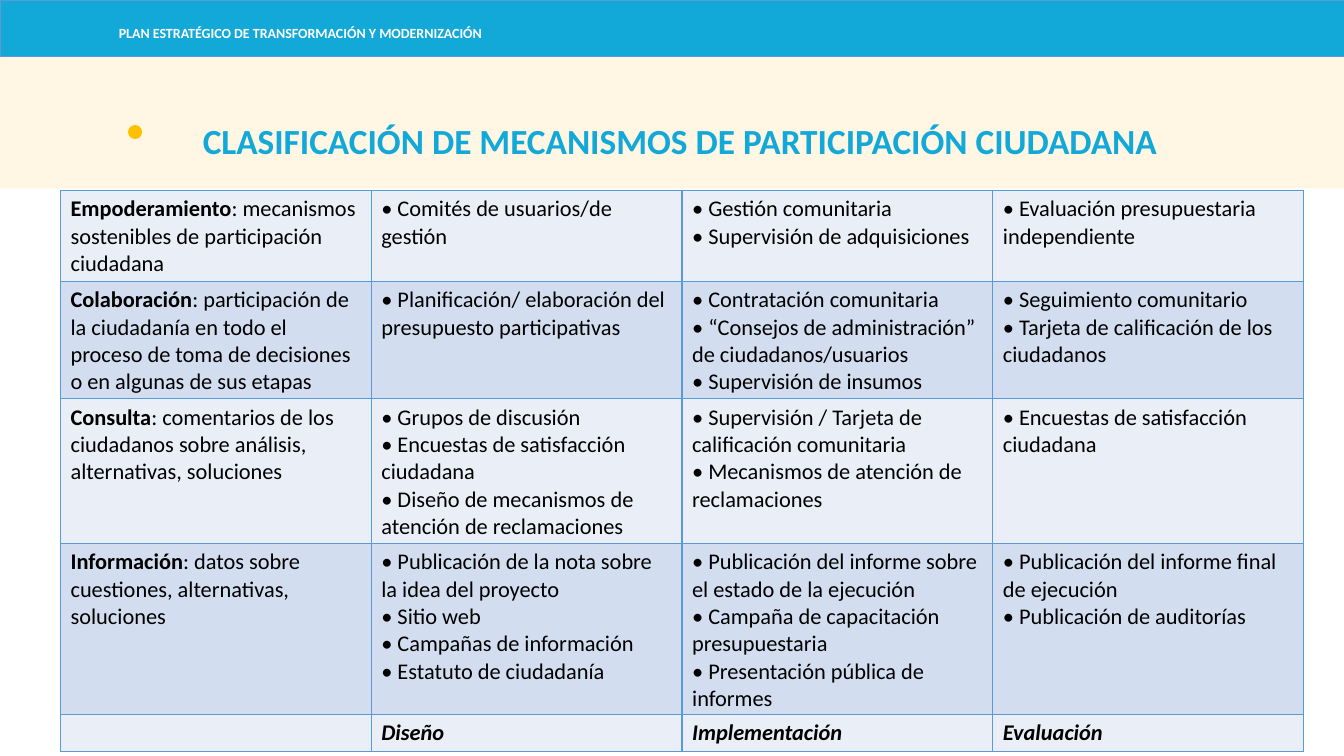
from lxml import etree
from pptx import Presentation
from pptx.dml.color import RGBColor
from pptx.enum import shapes, text
from pptx.oxml import ns
from pptx.util import Inches, Pt

BLUE = RGBColor(0x12, 0xA9, 0xD9)
BORDER = RGBColor(0x5B, 0x9B, 0xD5)
CREAM = RGBColor(0xFF, 0xF2, 0xCC)
GOLD = RGBColor(0xFF, 0xC0, 0x00)
WHITE = RGBColor(0xFF, 0xFF, 0xFF)
BLACK = RGBColor(0x00, 0x00, 0x00)
BANDS = [RGBColor(0xEA, 0xEF, 0xF7), RGBColor(0xD2, 0xDE, 0xEF)]


def add_run(paragraph, words, size=16, color=BLACK, bold=False, italic=False):
    run = paragraph.add_run()
    run.text = words
    run.font.name = "Calibri"
    run.font.size = Pt(size)
    run.font.color.rgb = color
    run.font.bold = bold
    run.font.italic = italic


def add_plain_shape(kind, left, top, width, height, color):
    """Add a preset shape with a solid fill, no outline and no shadow."""
    shape = slide.shapes.add_shape(
        kind, Inches(left), Inches(top), Inches(width), Inches(height))
    shape.shadow.inherit = False
    shape.fill.solid()
    shape.fill.fore_color.rgb = color
    shape.line.fill.background()
    return shape


prs = Presentation()
prs.slide_width, prs.slide_height = Inches(13.33), Inches(7.5)
slide = prs.slides.add_slide(prs.slide_layouts[6])

# Header bands
RECT = shapes.MSO_SHAPE.RECTANGLE
title_band = add_plain_shape(RECT, 0, 0.56, 13.33, 1.31, CREAM)
cream = title_band.fill._xPr.find(".//" + ns.qn("a:srgbClr"))
etree.SubElement(cream, ns.qn("a:alpha"), val="54000")
top_band = add_plain_shape(RECT, 0, 0, 13.33, 0.56, BLUE)
top_band.line.color.rgb = BORDER
top_band.line.width = Pt(0.5)

plan = slide.shapes.add_textbox(Inches(1.08), Inches(0.23), Inches(3.9), Inches(0.22)).text_frame
plan.word_wrap = True
plan.paragraphs[0].line_spacing = 0.8
add_run(plan.paragraphs[0], "PLAN ESTRATÉGICO DE TRANSFORMACIÓN Y MODERNIZACIÓN",
        size=10, color=WHITE, bold=True)

# Title, moved off centre by its left margin to clear the dot
title = slide.shapes.add_textbox(Inches(1.2), Inches(0.96), Inches(10.85), Inches(0.68)).text_frame
title.word_wrap = True
title.vertical_anchor = text.MSO_ANCHOR.BOTTOM
title.margin_left = Inches(0.34)
title.paragraphs[0].alignment = text.PP_ALIGN.CENTER
title.paragraphs[0].line_spacing = 0.7
add_run(title.paragraphs[0], "CLASIFICACIÓN DE MECANISMOS DE PARTICIPACIÓN CIUDADANA",
        size=25.2, color=BLUE, bold=True)
add_plain_shape(shapes.MSO_SHAPE.OVAL, 1.27, 1.24, 0.14, 0.14, GOLD)

# Each level: height, name, description, then the mechanisms of each stage
levels = [
    (0.85, "Empoderamiento", ": mecanismos sostenibles de participación ciudadana", [
        ["• Comités de usuarios/de gestión"],
        ["• Gestión comunitaria", "• Supervisión de adquisiciones"],
        ["• Evaluación presupuestaria independiente"]]),
    (1.09, "Colaboración", ": participación de la ciudadanía en todo el proceso de toma "
     "de decisiones o en algunas de sus etapas", [
        ["• Planificación/ elaboración del presupuesto participativas"],
        ["• Contratación comunitaria",
         "• “Consejos de administración” de ciudadanos/usuarios",
         "• Supervisión de insumos"],
        ["• Seguimiento comunitario", "• Tarjeta de calificación de los ciudadanos"]]),
    (1.34, "Consulta", ": comentarios de los ciudadanos sobre análisis, alternativas, soluciones", [
        ["• Grupos de discusión", "• Encuestas de satisfacción ciudadana",
         "• Diseño de mecanismos de atención de reclamaciones"],
        ["• Supervisión / Tarjeta de calificación comunitaria",
         "• Mecanismos de atención de reclamaciones"],
        ["• Encuestas de satisfacción ciudadana"]]),
    (1.58, "Información", ": datos sobre cuestiones, alternativas, soluciones", [
        ["• Publicación de la nota sobre la idea del proyecto", "• Sitio web",
         "• Campañas de información", "• Estatuto de ciudadanía"],
        ["• Publicación del informe sobre el estado de la ejecución",
         "• Campaña de capacitación presupuestaria",
         "• Presentación pública de informes"],
        ["• Publicación del informe final de ejecución", "• Publicación de auditorías"]]),
]
stages = ["Diseño", "Implementación", "Evaluación"]

table = slide.shapes.add_table(
    len(levels) + 1, len(stages) + 1,
    Inches(0.6), Inches(1.89), Inches(12.33), Inches(5.2)).table
table.first_row = False
table.horz_banding = False

for row, (height, name, description, mechanisms) in enumerate(levels):
    table.rows[row].height = Inches(height)
    heading = table.cell(row, 0).text_frame.paragraphs[0]
    add_run(heading, name, bold=True)
    add_run(heading, description)
    for column, items in enumerate(mechanisms, start=1):
        frame = table.cell(row, column).text_frame
        for index, item in enumerate(items):
            add_run(frame.add_paragraph() if index else frame.paragraphs[0], item)

stage_row = len(levels)
table.rows[stage_row].height = Inches(0.34)
for column, stage in enumerate(stages, start=1):
    add_run(table.cell(stage_row, column).text_frame.paragraphs[0], stage, bold=True, italic=True)
corner = table.cell(stage_row, 0).text_frame.paragraphs[0]
etree.SubElement(corner._p, ns.qn("a:endParaRPr"), sz="1600")

# Borders go before the fill in the cell properties
for row in range(len(table.rows)):
    for column in range(len(table.columns)):
        cell = table.cell(row, column)
        properties = cell._tc.get_or_add_tcPr()
        for side in ("lnL", "lnR", "lnT", "lnB"):
            edge = etree.SubElement(properties, ns.qn("a:" + side), w=str(Pt(1)))
            edge_fill = etree.SubElement(edge, ns.qn("a:solidFill"))
            etree.SubElement(edge_fill, ns.qn("a:srgbClr"), val=str(BORDER))
        cell.fill.solid()
        cell.fill.fore_color.rgb = BANDS[row % 2]

prs.save("out.pptx")
